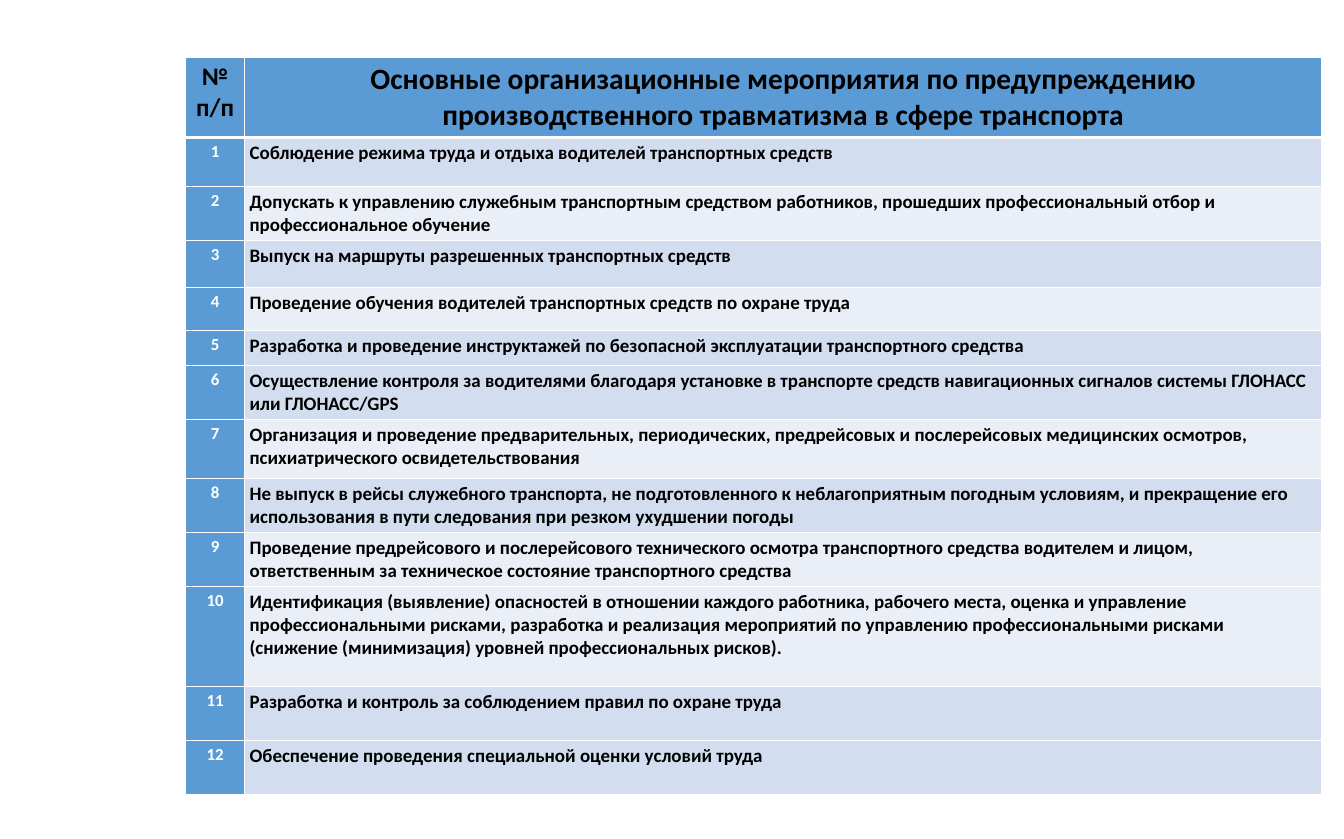
from dataclasses import dataclass

import lxml.etree
import pptx
import pptx.dml.color
import pptx.enum.text
import pptx.oxml.ns
import pptx.util


@dataclass(frozen=True)
class Theme:
    font: str = "Calibri"
    accent: str = "5B9BD5"
    band: str = "D2DEEF"
    pale: str = "EAEFF7"
    ink: str = "000000"
    paper: str = "FFFFFF"
    heading_size: int = 28
    corner_size: int = 24
    measure_size: int = 18
    number_size: int = 16
    rule: float = 0.96
    heavy_rule: float = 3
    side_inset: float = 0.07
    end_inset: float = 0.05


HEADINGS = ("№ п/п", "Основные организационные мероприятия по предупреждению производственного травматизма в сфере транспорта")
COLUMN_SHARES = (4.35, 80.14)
HEADING_SHARE = 9.4
MEASURES = (
    (5.88, "band", "Соблюдение режима труда и отдыха водителей транспортных средств"),
    (6.42, "pale", "Допускать к управлению служебным транспортным средством работников, прошедших профессиональный отбор и профессиональное обучение"),
    (5.61, "band", "Выпуск на маршруты разрешенных транспортных средств"),
    (5.15, "pale", "Проведение обучения водителей транспортных средств по охране труда"),
    (4.16, "band", "Разработка и проведение инструктажей по безопасной эксплуатации транспортного средства"),
    (6.42, "band", "Осуществление контроля за водителями благодаря установке в транспорте средств навигационных сигналов системы ГЛОНАСС или ГЛОНАСС/GPS"),
    (7.05, "pale", "Организация и проведение предварительных, периодических, предрейсовых и послерейсовых медицинских осмотров, психиатрического освидетельствования"),
    (6.42, "band", "Не выпуск в рейсы служебного транспорта, не подготовленного к неблагоприятным погодным условиям, и прекращение его использования в пути следования при резком ухудшении погоды"),
    (6.42, "pale", "Проведение предрейсового и послерейсового технического осмотра транспортного средства водителем и лицом, ответственным за техническое состояние транспортного средства"),
    (11.93, "pale", "Идентификация (выявление) опасностей в отношении каждого работника, рабочего места, оценка и управление профессиональными рисками, разработка и реализация мероприятий по управлению профессиональными рисками (снижение (минимизация) уровней профессиональных рисков)."),
    (6.42, "band", "Разработка и контроль за соблюдением правил по охране труда"),
    (6.42, "band", "Обеспечение проведения специальной оценки условий труда"),
)


def write(frame, text, *, font, size, color, bold=True, centered=False):
    paragraph = frame.paragraphs[0]
    align = pptx.enum.text.PP_ALIGN
    paragraph.alignment = align.CENTER if centered else align.LEFT
    run = paragraph.add_run()
    run.text = text
    run.font.name = font
    run.font.size = pptx.util.Pt(size)
    run.font.bold = bold
    run.font.color.rgb = pptx.dml.color.RGBColor.from_string(color)


class Sheet:
    def __init__(self, deck, theme):
        self.deck = deck
        self.theme = theme
        self.slide = deck.slides.add_slide(deck.slide_layouts[6])

    def across(self, percent):
        return round(self.deck.slide_width * percent / 100)

    def down(self, percent):
        return round(self.deck.slide_height * percent / 100)

    def table(self, left, top, columns, rows):
        table = self.slide.shapes.add_table(
            len(rows), len(columns), self.across(left), self.down(top),
            self.across(sum(columns)), self.down(sum(rows))).table
        table.horz_banding = False
        for column, share in zip(table.columns, columns):
            column.width = self.across(share)
        for row, share in zip(table.rows, rows):
            row.height = self.down(share)
        return table

    def borders(self, cell, **widths):
        qn = pptx.oxml.ns.qn
        properties = cell._tc.get_or_add_tcPr()
        for side in "LRTB":
            width = pptx.util.Pt(widths.get(side, self.theme.rule))
            line = lxml.etree.SubElement(properties, qn(f"a:ln{side}"), w=str(int(width)))
            fill = lxml.etree.SubElement(line, qn("a:solidFill"))
            lxml.etree.SubElement(fill, qn("a:srgbClr"), val=self.theme.paper)

    def cell(self, cell, text, fill, borders, **style):
        theme = self.theme
        cell.margin_left = cell.margin_right = pptx.util.Inches(theme.side_inset)
        cell.margin_top = cell.margin_bottom = pptx.util.Inches(theme.end_inset)
        self.borders(cell, **borders)
        cell.fill.solid()
        cell.fill.fore_color.rgb = pptx.dml.color.RGBColor.from_string(fill)
        write(cell.text_frame, text, font=theme.font, **style)


def main():
    deck = pptx.Presentation()
    deck.slide_width = pptx.util.Inches(17.72)
    deck.slide_height = pptx.util.Inches(11.06)
    theme = Theme()
    sheet = Sheet(deck, theme)
    row_shares = [HEADING_SHARE] + [share for share, _, _ in MEASURES]
    plan = sheet.table(13.83, 6.87, COLUMN_SHARES, row_shares)

    heading_sizes = (theme.corner_size, theme.heading_size)
    for column, (heading, size) in enumerate(zip(HEADINGS, heading_sizes)):
        sheet.cell(plan.cell(0, column), heading, theme.accent, {"B": theme.heavy_rule},
                   size=size, color=theme.ink, centered=True)

    for number, (_, tint, measure) in enumerate(MEASURES, 1):
        borders = {"T": theme.heavy_rule} if number == 1 else {}
        sheet.cell(plan.cell(number, 0), str(number), theme.accent, borders,
                   size=theme.number_size, color=theme.paper, centered=True)
        sheet.cell(plan.cell(number, 1), measure, getattr(theme, tint), borders,
                   size=theme.measure_size, color=theme.ink)

    deck.save("out.pptx")


if __name__ == "__main__":
    main()
